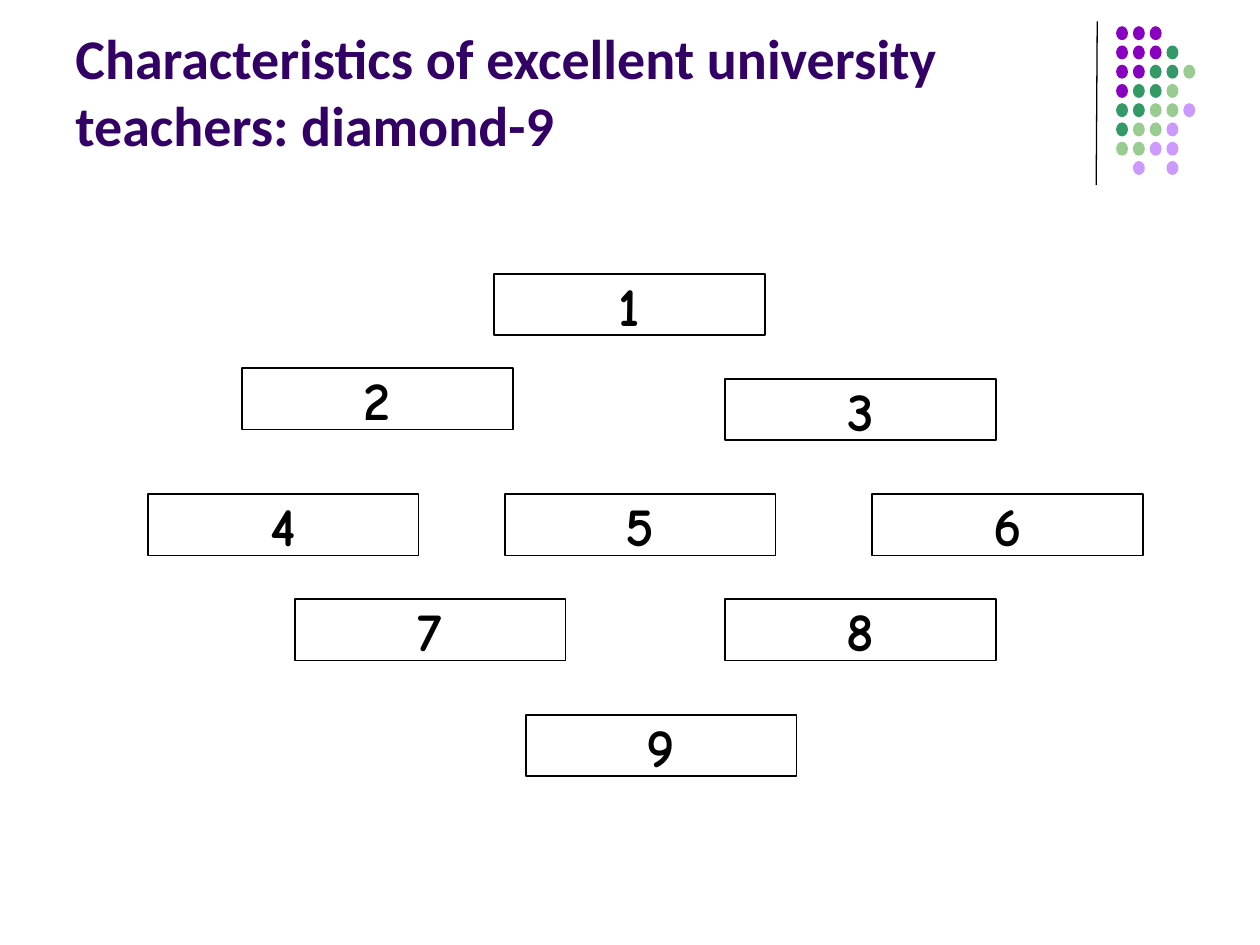
"""Build a diamond-9 ranking slide with a dotted corner ornament."""
import pptx
import pptx.dml.color
import pptx.enum.shapes
import pptx.enum.text
import pptx.oxml
import pptx.util

Pt = pptx.util.Pt
SHAPES = pptx.enum.shapes.MSO_SHAPE
MIDDLE = pptx.enum.text.MSO_ANCHOR.MIDDLE

TITLE = "Characteristics of excellent university teachers: diamond-9"
RANKS = [
    ("1", 282.2, 156.4),
    ("2", 138.2, 210.4),
    ("3", 414.4, 216.6),
    ("4", 84.4, 282.4),
    ("5", 288.4, 282.4),
    ("6", 498.2, 282.4),
    ("7", 168.4, 342.4),
    ("8", 414.4, 342.4),
    ("9", 300.4, 408.4),
]
DOT_ROWS = ["PPP", "PPPG", "PPGGL", "PGGL", "GGLLV", "GLLV", "LLVV", " V V"]
COLORS = {
    "P": "8A00C0",
    "G": "339966",
    "L": "99CC91",
    "V": "CC99FF",
    "title": "330066",
    "ink": "000000",
}
RANK_WIDTH, RANK_HEIGHT = 154.8, 35
DOT_LEFT, DOT_TOP = 637.8, 15
DOT_WIDTH, DOT_HEIGHT = 6.8, 8
DOT_STEP_X, DOT_STEP_Y = 9.6, 11


def color(name):
    return pptx.dml.color.RGBColor.from_string(COLORS[name])


def write(frame, text, font_name, size, ink):
    frame.vertical_anchor = MIDDLE
    paragraph = frame.paragraphs[0]
    paragraph.text = text
    font = paragraph.font
    font.name, font.size, font.bold = font_name, Pt(size), True
    font.color.rgb = color(ink)
    return paragraph


def add_plain(slide, preset, left, top, width, height):
    shape = slide.shapes.add_shape(preset, Pt(left), Pt(top), Pt(width), Pt(height))
    shape.shadow.inherit = False
    return shape


def add_divider(slide):
    divider = slide.shapes.add_connector(
        pptx.enum.shapes.MSO_CONNECTOR.STRAIGHT, Pt(627), Pt(12.2), Pt(626.4), Pt(105.8)
    )
    divider.line.color.rgb = color("ink")
    divider.line.width = Pt(0.75)
    properties = divider._element.spPr
    properties.append(properties.makeelement(pptx.oxml.ns.qn("a:effectLst"), {}))


def add_dots(slide):
    for row, dots in enumerate(DOT_ROWS):
        for column, shade in enumerate(dots):
            if shade == " ":
                continue
            dot = add_plain(
                slide, SHAPES.OVAL,
                DOT_LEFT + column * DOT_STEP_X, DOT_TOP + row * DOT_STEP_Y,
                DOT_WIDTH, DOT_HEIGHT,
            )
            dot.fill.solid()
            dot.fill.fore_color.rgb = color(shade)
            dot.line.fill.background()


def add_rank(slide, rank, left, top):
    box = add_plain(slide, SHAPES.RECTANGLE, left, top, RANK_WIDTH, RANK_HEIGHT)
    box.fill.background()
    box.line.color.rgb = color("ink")
    box.line.width = Pt(1)
    box.text_frame.word_wrap = False
    paragraph = write(box.text_frame, rank, "Comic Neue", 31, "ink")
    paragraph.alignment = pptx.enum.text.PP_ALIGN.CENTER


def main():
    deck = pptx.Presentation()
    deck.slide_width, deck.slide_height = Pt(720), Pt(540)
    slide = deck.slides.add_slide(deck.slide_layouts[6])
    add_divider(slide)
    add_dots(slide)
    for rank, left, top in RANKS:
        add_rank(slide, rank, left, top)
    title = slide.shapes.add_textbox(Pt(36), Pt(9.4), Pt(594), Pt(85))
    title.text_frame.word_wrap = True
    write(title.text_frame, TITLE, "Calibri", 32, "title")
    deck.save("out.pptx")


if __name__ == "__main__":
    main()
